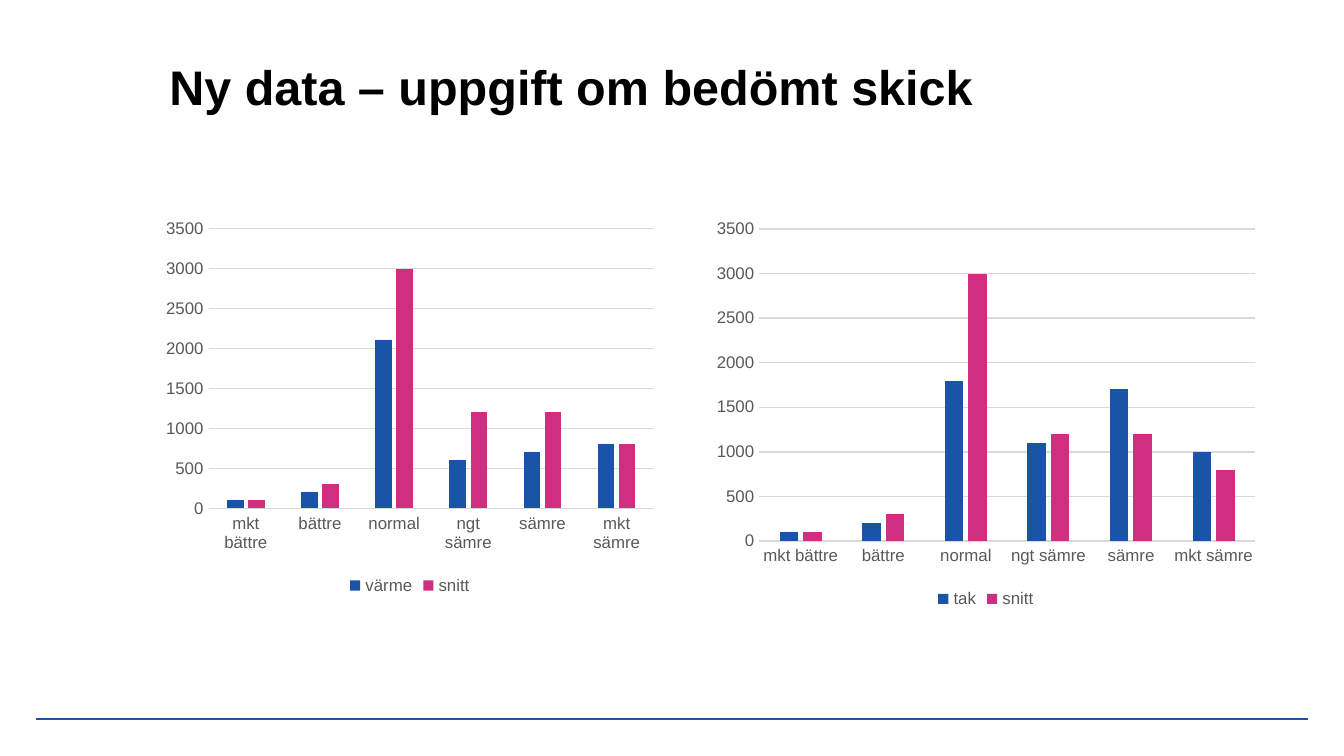
import pptx
import pptx.chart.data
import pptx.dml.color
import pptx.enum.chart
import pptx.enum.shapes
import pptx.enum.text
import pptx.oxml.ns
import pptx.util
from lxml import etree

Inches = pptx.util.Inches
Pt = pptx.util.Pt

HEADING = "Ny data – uppgift om bedömt skick"
CONDITIONS = ["mkt bättre", "bättre", "normal", "ngt sämre", "sämre", "mkt sämre"]
AVERAGE = ("snitt", [100, 300, 3000, 1200, 1200, 800])
COMPARISONS = [
    {"part": ("värme", [100, 200, 2100, 600, 700, 800]), "box": (1.16, 1.57, 3.78, 2.9)},
    {"part": ("tak", [100, 200, 1800, 1100, 1700, 1000]), "box": (5.25, 1.57, 4.17, 3)},
]
BLUE, PINK, GREY, PALE, BLACK = "1954A6", "D02F80", "595959", "D9D9D9", "000000"


def rgb(value):
    return pptx.dml.color.RGBColor.from_string(value)


def style_font(font, size, color, bold=False):
    font.name = "Arial"
    font.size = Pt(size)
    font.bold = bold
    font.color.rgb = rgb(color)


def style_line(line, color, width):
    line.color.rgb = rgb(color)
    line.width = Pt(width)


def write(shape, text, size, color, bold=False, spacing=None):
    frame = shape.text_frame
    frame.word_wrap = True
    frame.auto_size = pptx.enum.text.MSO_AUTO_SIZE.NONE
    frame.vertical_anchor = pptx.enum.text.MSO_ANCHOR.MIDDLE
    frame.text = text
    paragraph = frame.paragraphs[0]
    paragraph.alignment = pptx.enum.text.PP_ALIGN.LEFT
    if spacing:
        paragraph.line_spacing = Pt(spacing)
    style_font(paragraph.runs[0].font, size, color, bold)


def add_comparison(slide, part, box):
    data = pptx.chart.data.CategoryChartData()
    data.categories = CONDITIONS
    for name, counts in (part, AVERAGE):
        data.add_series(name, counts)
    chart = slide.shapes.add_chart(
        pptx.enum.chart.XL_CHART_TYPE.COLUMN_CLUSTERED, *map(Inches, box), data
    ).chart
    style_font(chart.font, 10, BLACK)
    chart.has_title = False
    chart.has_legend = True
    chart.legend.position = pptx.enum.chart.XL_LEGEND_POSITION.BOTTOM
    chart.legend.include_in_layout = False
    style_font(chart.legend.font, 9, GREY)

    for axis in (chart.category_axis, chart.value_axis):
        axis.major_tick_mark = pptx.enum.chart.XL_TICK_MARK.NONE
        axis.minor_tick_mark = pptx.enum.chart.XL_TICK_MARK.NONE
        style_font(axis.tick_labels.font, 9, GREY)
    style_line(chart.category_axis.format.line, PALE, 0.75)

    counts_axis = chart.value_axis
    counts_axis.minimum_scale = 0
    counts_axis.maximum_scale = 3500
    counts_axis.major_unit = 500
    counts_axis.format.line.fill.background()
    counts_axis.has_major_gridlines = True
    style_line(counts_axis.major_gridlines.format.line, PALE, 0.75)

    columns = chart.plots[0]
    columns.vary_by_categories = False
    columns.gap_width = 219
    columns.overlap = -27
    for series, color in zip(columns.series, (BLUE, PINK)):
        series.format.fill.solid()
        series.format.fill.fore_color.rgb = rgb(color)
        series.invert_if_negative = False


def main():
    deck = pptx.Presentation()
    deck.slide_width, deck.slide_height = Inches(10), Inches(10 * 9 / 16)
    slide = deck.slides.add_slide(deck.slide_layouts[5])

    footer_rule = slide.shapes.add_connector(
        pptx.enum.shapes.MSO_CONNECTOR.STRAIGHT,
        Inches(0.27), Inches(5.35), Inches(9.73), Inches(5.35),
    )
    style_line(footer_rule.line, BLUE, 1)
    etree.SubElement(footer_rule.element.spPr, pptx.oxml.ns.qn("a:effectLst"))

    heading = slide.shapes.title
    heading.left, heading.top = Inches(1.16), Inches(0.28)
    heading.width, heading.height = Inches(8.26), Inches(0.74)
    write(heading, HEADING, size=26, color=BLACK, bold=True, spacing=30)

    for comparison in COMPARISONS:
        add_comparison(slide, **comparison)

    deck.save("out.pptx")


if __name__ == "__main__":
    main()
